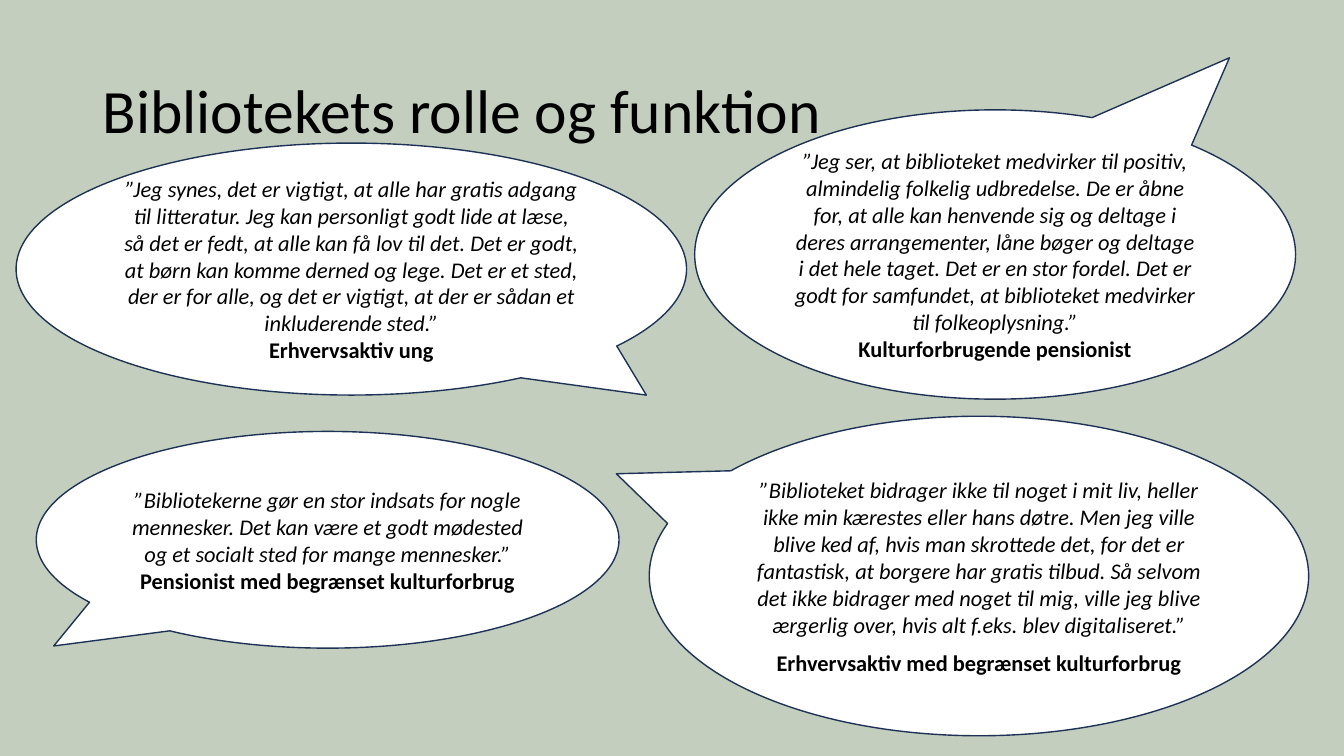
import pptx
import pptx.util
import pptx.dml.color
import pptx.enum.shapes
import pptx.enum.text

Inches = pptx.util.Inches
Pt = pptx.util.Pt

FONT = "Calibri"
COLOURS = {"background": "C3CEBE", "bubble": "FFFFFF", "outline": "1E3256", "text": "000000"}
TITLE = "Bibliotekets rolle og funktion"

# place: left, top, width, height; tail: tip offset from the centre, as a share of the size
BUBBLES = [
    {
        "quote": "”Jeg synes, det er vigtigt, at alle har gratis adgang til litteratur. "
                 "Jeg kan personligt godt lide at læse, så det er fedt, at alle kan få lov til det. "
                 "Det er godt, at børn kan komme derned og lege. Det er et sted, der er for alle, "
                 "og det er vigtigt, at der er sådan et inkluderende sted.”",
        "speaker": "Erhvervsaktiv ung",
        "place": (0.16, 1.42, 6.65, 2.5), "tail": (0.44, 0.5), "gap": 0,
    },
    {
        "quote": "”Bibliotekerne gør en stor indsats for nogle mennesker. Det kan være et godt "
                 "mødested og et socialt sted for mange mennesker.”",
        "speaker": "Pensionist med begrænset kulturforbrug",
        "place": (0.36, 4.28, 5.78, 2.15), "tail": (-0.47, 0.49), "gap": 0,
    },
    {
        "quote": "”Biblioteket bidrager ikke til noget i mit liv, heller ikke min kærestes eller "
                 "hans døtre. Men jeg ville blive ked af, hvis man skrottede det, for det er "
                 "fantastisk, at borgere har gratis tilbud. Så selvom det ikke bidrager med noget "
                 "til mig, ville jeg blive ærgerlig over, hvis alt f.eks. blev digitaliseret.”",
        "speaker": "Erhvervsaktiv med begrænset kulturforbrug",
        "place": (6.44, 4.13, 6.54, 3.17), "tail": (-0.55, -0.32), "gap": 8,
    },
    {
        "quote": "”Jeg ser, at biblioteket medvirker til positiv, almindelig folkelig udbredelse. "
                 "De er åbne for, at alle kan henvende sig og deltage i deres arrangementer, "
                 "låne bøger og deltage i det hele taget. Det er en stor fordel. Det er godt for "
                 "samfundet, at biblioteket medvirker til folkeoplysning.”",
        "speaker": "Kulturforbrugende pensionist",
        "place": (6.89, 1.09, 5.96, 2.87), "tail": (0.39, -0.68), "gap": 0,
    },
]


def colour(name):
    return pptx.dml.color.RGBColor.from_string(COLOURS[name])


def add_span(para, text, size, bold=False, italic=False):
    span = para.add_run()
    span.text = text
    span.font.name = FONT
    span.font.size = Pt(size)
    span.font.bold = bold
    span.font.italic = italic
    span.font.color.rgb = colour("text")


def add_title(page):
    box = page.shapes.title
    box.left, box.top, box.width, box.height = map(Inches, (0.92, 0.4, 11.5, 1.45))
    box.text_frame.vertical_anchor = pptx.enum.text.MSO_ANCHOR.MIDDLE
    para = box.text_frame.paragraphs[0]
    para.alignment = pptx.enum.text.PP_ALIGN.LEFT
    para.line_spacing = 0.9
    add_span(para, TITLE, 44)


def add_bubble(page, bubble):
    shape = page.shapes.add_shape(
        pptx.enum.shapes.MSO_SHAPE.OVAL_CALLOUT, *map(Inches, bubble["place"]))
    for index, offset in enumerate(bubble["tail"]):
        shape.adjustments[index] = offset
    shape.shadow.inherit = False
    shape.fill.solid()
    shape.fill.fore_color.rgb = colour("bubble")
    shape.line.color.rgb = colour("outline")
    shape.line.width = Pt(1)

    frame = shape.text_frame
    frame.word_wrap = True
    frame.vertical_anchor = pptx.enum.text.MSO_ANCHOR.MIDDLE
    quote, speaker = frame.paragraphs[0], frame.add_paragraph()
    for para in (quote, speaker):
        para.alignment = pptx.enum.text.PP_ALIGN.CENTER
        para.space_after = Pt(bubble["gap"])
    add_span(quote, bubble["quote"], 16, italic=True)
    add_span(speaker, bubble["speaker"], 16, bold=True)


def main():
    deck = pptx.Presentation()
    deck.slide_width, deck.slide_height = Inches(13.33), Inches(7.5)
    title_only = deck.slide_layouts[5]
    page = deck.slides.add_slide(title_only)
    page.background.fill.solid()
    page.background.fill.fore_color.rgb = colour("background")
    add_title(page)
    for bubble in BUBBLES:
        add_bubble(page, bubble)
    deck.save("out.pptx")


if __name__ == "__main__":
    main()
